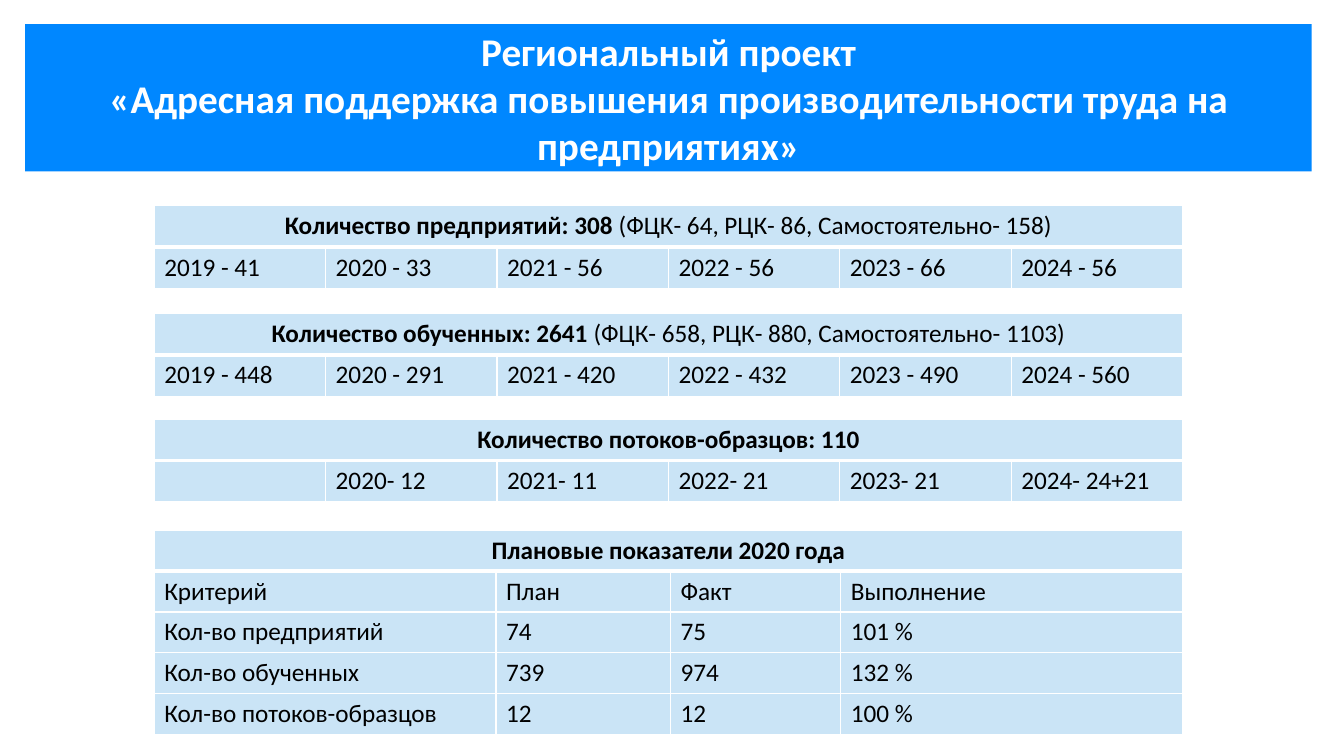
from dataclasses import dataclass

from lxml.etree import SubElement
from pptx import Presentation
from pptx.dml.color import RGBColor
from pptx.enum.shapes import MSO_SHAPE as Preset
from pptx.enum.text import MSO_ANCHOR as Anchor, PP_ALIGN as Align
from pptx.oxml.ns import qn
from pptx.util import Inches, Pt


@dataclass(frozen=True)
class Theme:
    font: str = "Calibri"
    banner: str = "0087FF"
    cell: str = "CAE4F6"
    white: str = "FFFFFF"
    ink: str = "000000"
    title_size: int = 28
    table_size: int = 18
    thin: int = 1
    thick: int = 3


THEME = Theme()
TABLE_LEFT = 1.53
YEAR_WIDTHS = [1.7] * 6
PLAN_WIDTHS = [3.39, 1.73, 1.69, 3.39]

YEAR_TABLES = [
    (2.04, "Количество предприятий: 308 ", "(ФЦК- 64, РЦК- 86, Самостоятельно- 158)",
     ["2019 - 41", "2020 - 33", "2021 - 56", "2022 - 56", "2023 - 66", "2024 - 56"]),
    (3.11, "Количество обученных: 2641 ", "(ФЦК- 658, РЦК- 880, Самостоятельно- 1103)",
     ["2019 - 448", "2020 - 291", "2021 - 420", "2022 - 432", "2023 - 490", "2024 - 560"]),
    (4.16, "Количество потоков-образцов: 110", "",
     ["", "2020- 12", "2021- 11", "2022- 21", "2023- 21", "2024- 24+21"]),
]
PLAN_ROWS = [
    ["Критерий", "План", "Факт", "Выполнение"],
    ["Кол-во предприятий", "74", "75", "101 %"],
    ["Кол-во обученных", "739", "974", "132 %"],
    ["Кол-во потоков-образцов", "12", "12", "100 %"],
]


def add_span(para, text, size, color, bold=False):
    span = para.add_run()
    span.text = text
    formats = {"name": THEME.font, "size": Pt(size), "bold": bold}
    for name, value in formats.items():
        setattr(span.font, name, value)
    span.font.color.rgb = RGBColor.from_string(color)


def add_banner(page, lines):
    box = page.shapes.add_shape(
        Preset.RECTANGLE, Inches(0.25), Inches(0.24), Inches(12.76), Inches(1.46))
    box.shadow.inherit = False
    box.fill.solid()
    box.fill.fore_color.rgb = RGBColor.from_string(THEME.banner)
    box.line.fill.background()
    frame = box.text_frame
    for name, value in {"word_wrap": True, "vertical_anchor": Anchor.MIDDLE}.items():
        setattr(frame, name, value)
    para = frame.paragraphs[0]
    for name, value in {"alignment": Align.CENTER, "space_before": Pt(10)}.items():
        setattr(para, name, value)
    for index, line in enumerate(lines):
        if index:
            para.add_line_break()
        add_span(para, line, THEME.title_size, THEME.white, bold=True)


def style_cell(cell, row):
    properties = cell._tc.get_or_add_tcPr()
    widths = {
        "lnL": THEME.thin,
        "lnR": THEME.thin,
        "lnT": THEME.thick if row == 1 else THEME.thin,
        "lnB": THEME.thick if row == 0 else THEME.thin,
    }
    for side, width in widths.items():
        border = SubElement(properties, qn(f"a:{side}"), w=str(Pt(width)))
        fill = SubElement(border, qn("a:solidFill"))
        SubElement(fill, qn("a:srgbClr"), val=THEME.white)
    cell.fill.solid()
    cell.fill.fore_color.rgb = RGBColor.from_string(THEME.cell)


def add_grid(page, top, widths, row_height, heading, detail, rows):
    row_count = len(rows) + 1
    table = page.shapes.add_table(
        row_count, len(widths), Inches(TABLE_LEFT), Inches(top),
        Inches(sum(widths)), Inches(row_height * row_count)).table
    for name in ("first_row", "horz_banding"):
        setattr(table, name, False)
    for column, width in zip(table.columns, widths):
        column.width = Inches(width)
    for row, line in enumerate(table.rows):
        line.height = Inches(row_height)
        for cell in line.cells:
            style_cell(cell, row)

    header = table.cell(0, 0)
    header.merge(table.cell(0, len(widths) - 1))
    para = header.text_frame.paragraphs[0]
    para.alignment = Align.CENTER
    add_span(para, heading, THEME.table_size, THEME.ink, bold=True)
    if detail:
        add_span(para, detail, THEME.table_size, THEME.ink)

    for row, texts in enumerate(rows, start=1):
        for column, text in enumerate(texts):
            if text:
                para = table.cell(row, column).text_frame.paragraphs[0]
                add_span(para, text, THEME.table_size, THEME.ink)


def main():
    deck = Presentation()
    deck.slide_width, deck.slide_height = Inches(13.33), Inches(7.5)
    page = deck.slides.add_slide(deck.slide_layouts[6])
    add_banner(page, [
        "Региональный проект",
        "«Адресная поддержка повышения производительности труда на предприятиях»",
    ])
    for top, heading, detail, years in YEAR_TABLES:
        add_grid(page, top, YEAR_WIDTHS, 0.41, heading, detail, [years])
    add_grid(page, 5.26, PLAN_WIDTHS, 0.4, "Плановые показатели 2020 года", "", PLAN_ROWS)
    deck.save("out.pptx")


if __name__ == "__main__":
    main()
